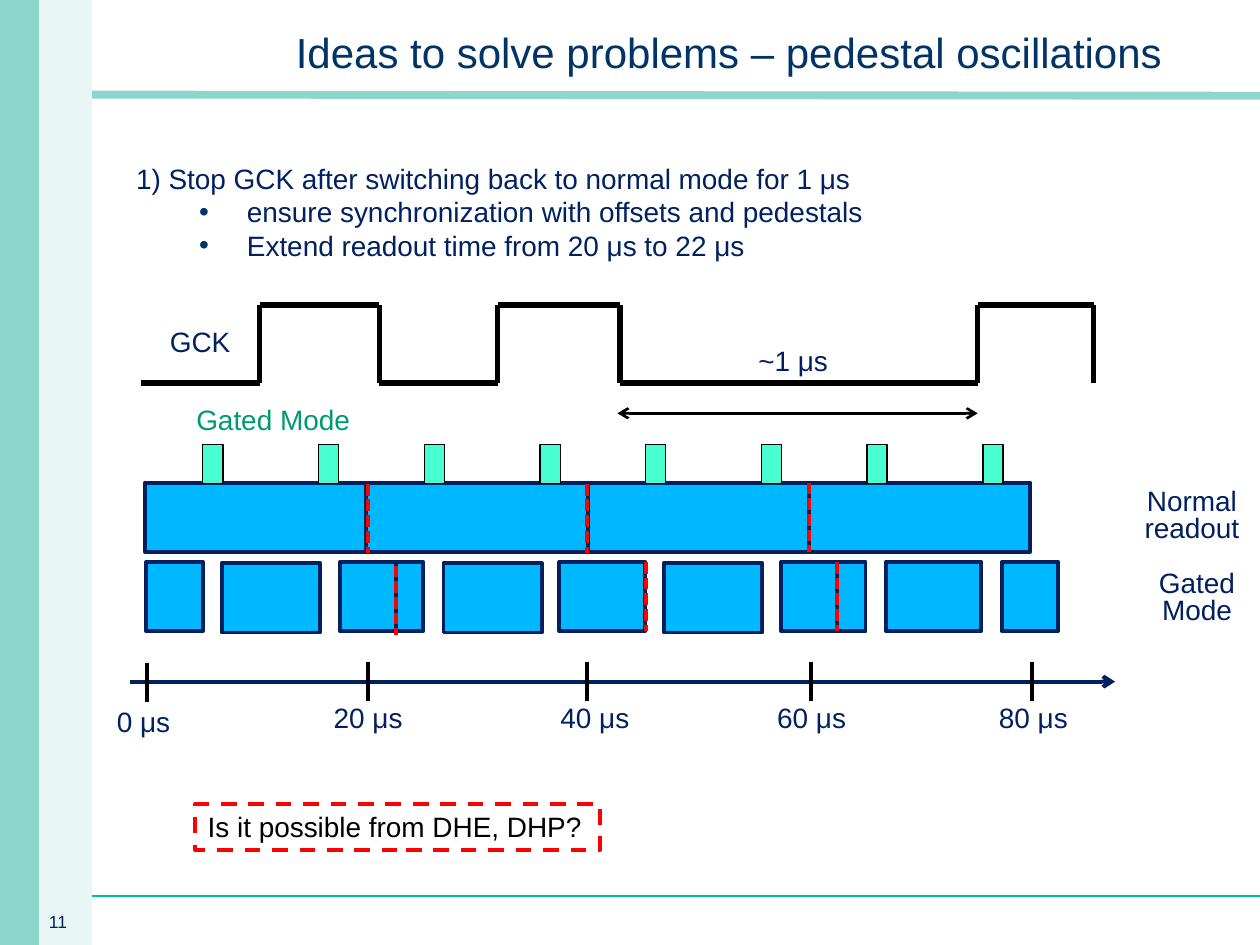
import itertools

import pptx
import pptx.dml.color
import pptx.enum.dml
import pptx.enum.shapes
import pptx.enum.text
import pptx.oxml
import pptx.oxml.ns
import pptx.util

# The slide is a grid of 100 columns by 75 rows of square cells.
CELL = 0.1
COLUMNS, ROWS = 100, 75
FONT = "Arial"
NAVY, TITLE_BLUE, TEAL, GREEN = "002060", "003366", "8DD6CE", "009973"
BLACK, RED, READOUT_BLUE, GATE_GREEN = "000000", "FF0000", "00B8FF", "47FFD1"
DASH = pptx.enum.dml.MSO_LINE.DASH
SHORT_DASH = pptx.enum.dml.MSO_LINE.SQUARE_DOT
LEFT, CENTER = pptx.enum.text.PP_ALIGN.LEFT, pptx.enum.text.PP_ALIGN.CENTER

FRAME_LEFT, FRAME_WIDTH, FRAMES = 11.5, 17.57, 4
GATE_OFFSETS = (4.6, 13.8)
CLOCK_EDGES = (11.2, 20.6, 30.1, 39.5, 49.2, 77.6, 86.8)
CLOCK_LOW, CLOCK_HIGH = 30.4, 24.2
# left, top, width
GATED_BLOCKS = (
    (11.6, 44.6, 4.5), (17.6, 44.7, 7.8), (27, 44.6, 4.5), (31.4, 44.6, 2.2),
    (35.2, 44.7, 7.8), (44.4, 44.6, 6.8), (52.7, 44.7, 7.8), (62, 44.6, 4.5),
    (66.4, 44.6, 2.3), (70.3, 44.6, 7.6), (79.5, 44.6, 4.5),
)
# column, top row
FRAME_ENDS = ((29.2, 38.4), (46.6, 38.4), (64.2, 38.3),
              (31.4, 44.9), (51.3, 44.6), (66.4, 44.6))
# label, tick column, tick top, label left, label top, label width
TIME_MARKS = (
    ("0 μs", 11.7, 52.6, 8.3, 55.9, 6.3), ("20 μs", 29.2, 52.5, 25.5, 55.6, 7.6),
    ("40 μs", 46.6, 52.5, 43.5, 55.6, 7.6), ("60 μs", 64.4, 52.5, 60.7, 55.6, 7.6),
    ("80 μs", 81.9, 52.5, 78.3, 55.6, 7.6),
)


def cells(count):
    return pptx.util.Inches(count * CELL)


def color(hex_text):
    return pptx.dml.color.RGBColor.from_string(hex_text)


def style_line(line, hex_text, points, dash=None):
    line.color.rgb = color(hex_text)
    line.width = pptx.util.Pt(points)
    if dash is not None:
        line.dash_style = dash


def write(paragraph, text, size, hex_text, spacing=1.0, align=LEFT):
    paragraph.alignment = align
    paragraph.line_spacing = spacing
    paragraph.space_before = pptx.util.Pt(0)
    run = paragraph.add_run()
    run.text = text
    run.font.name = FONT
    run.font.size = pptx.util.Pt(size)
    run.font.color.rgb = color(hex_text)


def add_block(slide, left, top, width, height, fill, outline=None, points=2.25):
    block = slide.shapes.add_shape(
        pptx.enum.shapes.MSO_SHAPE.RECTANGLE, *map(cells, (left, top, width, height)))
    block.shadow.inherit = False
    block.fill.solid()
    block.fill.fore_color.rgb = color(fill)
    if outline:
        style_line(block.line, outline, points)
    else:
        block.line.fill.background()


def add_line(slide, start, end, hex_text, points, dash=None, arrows=()):
    """Draw a straight line; arrows names its ends, headEnd before tailEnd."""
    line = slide.shapes.add_connector(
        pptx.enum.shapes.MSO_CONNECTOR.STRAIGHT, *map(cells, (*start, *end)))
    style_line(line.line, hex_text, points, dash)
    outline = line.line._get_or_add_ln()
    for arrow in arrows:
        pptx.oxml.ns.qn("a:ln")
        outline.append(xml_element(arrow, 'type="arrow"'))
    line._element.spPr.append(xml_element("effectLst"))


def xml_element(tag, attributes="", content=""):
    return pptx.oxml.parse_xml(
        f'<a:{tag} {pptx.oxml.ns.nsdecls("a")} {attributes}>{content}</a:{tag}>')


def add_label(slide, text, left, top, width, height=3.2, size=16, ink=NAVY,
              spacing=0.8, align=LEFT, wrap=False):
    label = slide.shapes.add_textbox(*map(cells, (left, top, width, height)))
    label.text_frame.word_wrap = wrap
    write(label.text_frame.paragraphs[0], text, size, ink, spacing, align)
    return label


def place(placeholder, left, top, width, height, anchor):
    placeholder.left, placeholder.top, placeholder.width, placeholder.height = map(
        cells, (left, top, width, height))
    frame = placeholder.text_frame
    frame.word_wrap = True
    frame.auto_size = pptx.enum.text.MSO_AUTO_SIZE.NONE
    frame.vertical_anchor = anchor
    return frame


def add_decoration(slide):
    add_line(slide, (0, 7.5), (COLUMNS, 7.6), TEAL, 4.5)
    add_line(slide, (7.3, 71.1), (COLUMNS, 71.1), "00BAB6", 1.5)
    add_block(slide, 3, 0, 4.3, ROWS, "E8F7F5")
    add_block(slide, 0, 0, 3.1, ROWS, TEAL)
    add_label(slide, "11", 2.9, 72.1, 4.8, 2.4, size=10)


def add_headline(slide):
    title = place(slide.shapes.title, 17.7, 1.3, 80.3, 5.2,
                  pptx.enum.text.MSO_ANCHOR.MIDDLE)
    write(title.paragraphs[0], "Ideas to solve problems – pedestal oscillations",
          24, TITLE_BLUE, 1.1, CENTER)


def add_proposal(slide):
    body = place(slide.placeholders[1], 9.8, 12.3, 62.2, 9.1,
                 pptx.enum.text.MSO_ANCHOR.TOP)
    proposal = body.paragraphs[0]
    properties = proposal._p.get_or_add_pPr()
    properties.set("marL", "0")
    properties.set("indent", "0")
    properties.append(xml_element("buNone"))
    write(proposal, "1) Stop GCK after switching back to normal mode for 1 μs", 16, NAVY)
    for text in ("ensure synchronization with offsets and pedestals",
                 "Extend readout time from 20 μs to 22 μs"):
        point = body.add_paragraph()
        point.level = 1
        properties = point._p.get_or_add_pPr()
        properties.set("marL", str(cells(8.8)))
        properties.set("indent", str(cells(-3.8)))
        properties.append(xml_element("buClr", content=f'<a:srgbClr val="{TITLE_BLUE}"/>'))
        properties.append(xml_element("buFont", f'typeface="{FONT}"'))
        properties.append(xml_element("buChar", 'char="•"'))
        write(point, text, 16, NAVY)


def add_clock(slide):
    levels = itertools.cycle((CLOCK_LOW, CLOCK_HIGH))
    for (start, end), level in zip(itertools.pairwise(CLOCK_EDGES), levels):
        add_line(slide, (start, level), (end, level), BLACK, 3)
        add_line(slide, (end, CLOCK_HIGH), (end, CLOCK_LOW), BLACK, 3)
    add_line(slide, (49, 32.8), (77.6, 32.8), BLACK, 1.5, arrows=("headEnd", "tailEnd"))
    add_label(slide, "~1 μs", 59.2, 27.3, 7.6)
    add_label(slide, "GCK", 12.5, 25.8, 6.9)


def add_readouts(slide):
    for frame in range(FRAMES):
        left = FRAME_LEFT + frame * FRAME_WIDTH
        add_block(slide, left, 38.3, FRAME_WIDTH, 5.5, READOUT_BLUE, NAVY)
        for offset in GATE_OFFSETS:
            add_block(slide, left + offset, 35.3, 1.6, 3.1, GATE_GREEN, BLACK, 0.75)
    for left, top, width in GATED_BLOCKS:
        add_block(slide, left, top, width, 5.5, READOUT_BLUE, NAVY)
    for column, top in FRAME_ENDS:
        add_line(slide, (column, top), (column, top + 5.5), RED, 2.25, SHORT_DASH)
    add_label(slide, "Gated Mode", 14.6, 32, 14.4, ink=GREEN)
    add_label(slide, "Normal readout", 88.3, 38.4, 12.6, 5.3, align=CENTER, wrap=True)
    add_label(slide, "Gated Mode", 88.7, 44.9, 12.6, 5.3, align=CENTER, wrap=True)


def add_time_axis(slide):
    add_line(slide, (10.3, 54.1), (88.5, 54.1), NAVY, 2.25, arrows=("tailEnd",))
    for text, tick, tick_top, left, top, width in TIME_MARKS:
        add_line(slide, (tick, tick_top), (tick, tick_top + 3.1), BLACK, 2.25)
        add_label(slide, text, left, top, width)


def main():
    deck = pptx.Presentation()
    deck.slide_width, deck.slide_height = cells(COLUMNS), cells(ROWS)
    slide = deck.slides.add_slide(deck.slide_layouts[1])
    add_decoration(slide)
    add_headline(slide)
    add_proposal(slide)
    add_clock(slide)
    add_readouts(slide)
    add_time_axis(slide)
    question = add_label(slide, "Is it possible from DHE, DHP?", 15.5, 63.8, 32.1, 3.7,
                         ink=BLACK, spacing=1.0)
    style_line(question.line, RED, 2.25, DASH)
    deck.save("out.pptx")


if __name__ == "__main__":
    main()
